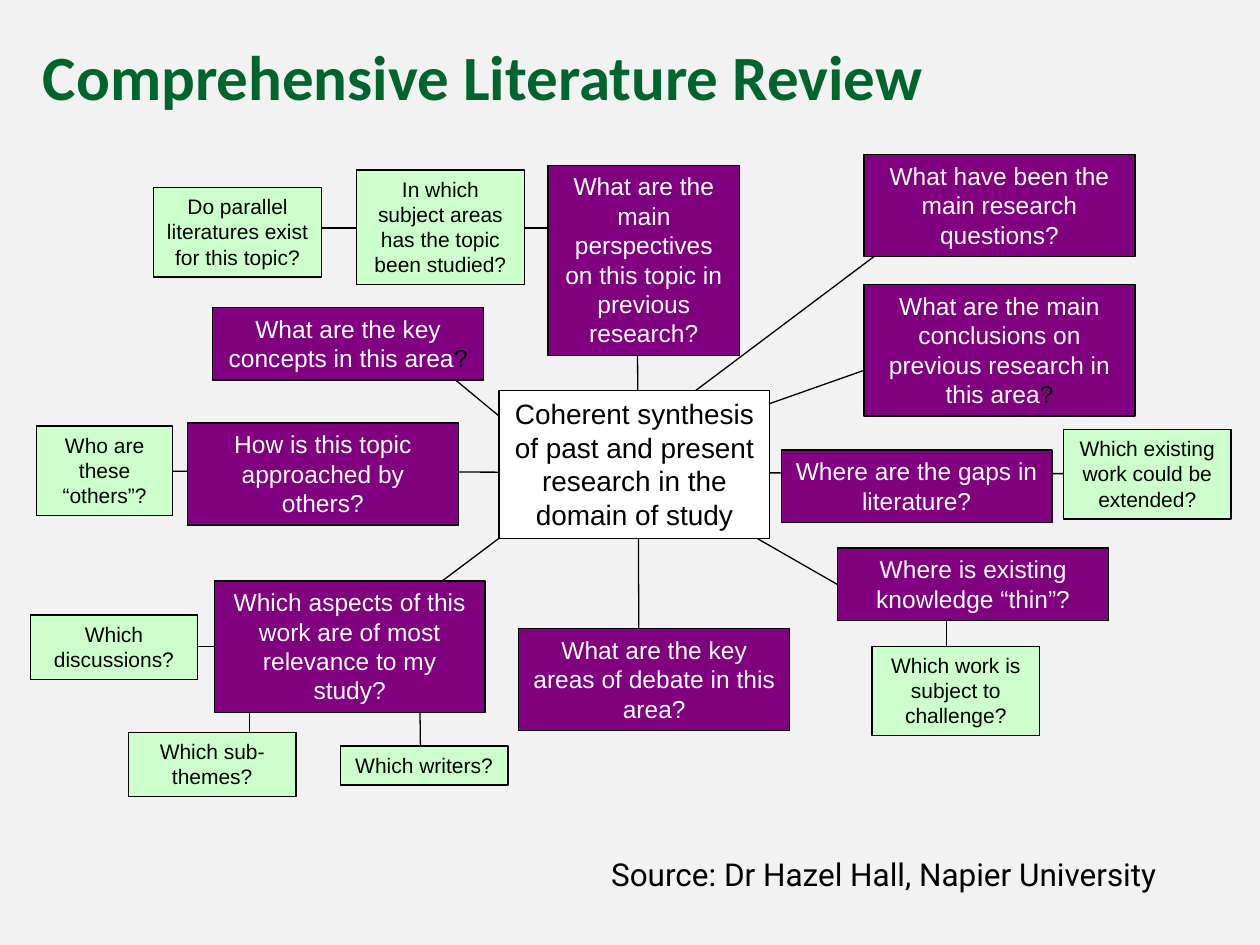
from lxml.etree import SubElement
from pptx import Presentation
from pptx.dml.color import RGBColor
from pptx.enum.shapes import MSO_CONNECTOR, MSO_SHAPE
from pptx.enum.text import MSO_ANCHOR, PP_ALIGN
from pptx.oxml.ns import qn
from pptx.util import Cm, Pt

HUES = {
    "back": "F2F2F2", "title": "00642D", "black": "000000",
    "white": "FFFFFF", "purple": "800080", "green": "CCFFCC",
}
KINDS = {
    "core": ("white", "black", 16),
    "main": ("purple", "white", 14),
    "side": ("green", "black", 12),
}
TITLE = "Comprehensive Literature Review"
SOURCE = "Source: Dr Hazel Hall, Napier University"
WIDE, SLIM = 5.46, 3.38

LINKS = [
    (6.22, 4.6, 12.07, 4.6),
    (19.08, 11.99, 19.08, 13.11),
    (3.73, 13.03, 5.16, 13.03),
    (8.46, 13.82, 8.48, 15.42),
    (5.03, 13.97, 5.03, 15.14),
    (8.64, 7.21, 10.57, 8.81),
    (14.68, 10.52, 17.07, 11.89),
    (14.88, 8.36, 19.08, 6.88),
    (8.89, 11.73, 18.62, 4.42),
    (12.85, 6.63, 12.88, 13.21),
    (3.2, 9.5, 22.2, 9.55),
]
BOXES = [
    ("core", 10.06, 7.87, WIDE, 4,
     ["Coherent synthesis of past and present research in the domain of study"]),
    ("main", 17.42, 5.74, WIDE, 4,
     ["What are the main conclusions on previous research in this area", "?"]),
    ("main", 10.46, 12.67, WIDE, 3, ["What are the key areas of debate in this area?"]),
    ("main", 4.32, 11.71, WIDE, 4,
     ["Which aspects of this work are of most relevance to my study?"]),
    ("main", 4.29, 6.2, WIDE, 2, ["What are the key concepts in this area", "?"]),
    ("main", 17.42, 3.12, WIDE, 3, ["What have been the main research questions?"]),
    ("main", 16.89, 11.05, WIDE, 2, ["Where is existing knowledge “thin”?"]),
    ("main", 3.78, 8.53, WIDE, 3, ["How is this topic approached by others?"]),
    ("main", 15.75, 9.07, WIDE, 2, ["Where are the gaps in literature?"]),
    ("main", 11.05, 3.33, 3.86, 6,
     ["What are the main perspectives on this topic in previous research?"]),
    ("side", 3.1, 3.78, SLIM, 3, ["Do parallel literatures exist for this topic?"]),
    ("side", 0.61, 12.4, SLIM, 2, ["Which discussions?"]),
    ("side", 2.59, 14.76, SLIM, 2, ["Which sub-themes?"]),
    ("side", 6.86, 15.04, SLIM, 1, ["Which writers?"]),
    ("side", 17.58, 13.03, SLIM, 3, ["Which work is subject to challenge?"]),
    ("side", 0.74, 8.59, 2.74, 3, ["Who are these “others”?"]),
    ("side", 21.44, 8.66, SLIM, 3, ["Which existing work could be extended?"]),
    ("side", 7.19, 3.43, SLIM, 4, ["In which subject areas has the topic been studied?"]),
]


def hue(name):
    return RGBColor.from_string(HUES[name])


def write(para, text, face, size, ink, bold=False):
    run = para.add_run()
    run.text = text
    font = run.font
    font.name, font.size, font.bold = face, Pt(size), bold
    font.color.rgb = hue(ink)


def edge(line):
    line.color.rgb = hue("black")
    line.width = Pt(0.75)


def link(ends):
    wire = slide.shapes.add_connector(MSO_CONNECTOR.STRAIGHT, *map(Cm, ends))
    edge(wire.line)
    SubElement(wire.element.spPr, qn("a:effectLst"))


def box(kind, left, top, width, rows, parts):
    fill, ink, size = KINDS[kind]
    high = rows * size * 0.0423 + 0.28
    shape = slide.shapes.add_shape(
        MSO_SHAPE.RECTANGLE, *map(Cm, (left, top, width, high)))
    shape.shadow.inherit = False
    shape.fill.solid()
    shape.fill.fore_color.rgb = hue(fill)
    edge(shape.line)
    frame = shape.text_frame
    frame.word_wrap = True
    frame.vertical_anchor = MSO_ANCHOR.TOP
    para = frame.paragraphs[0]
    para.alignment = PP_ALIGN.CENTER
    for text, tone in zip(parts, (ink, "black")):
        write(para, text, "Arial", size, tone)


deck = Presentation()
deck.slide_width, deck.slide_height = Cm(25.4), Cm(19.05)
slide = deck.slides.add_slide(deck.slide_layouts[5])
slide.background.fill.solid()
slide.background.fill.fore_color.rgb = hue("back")

for ends in LINKS:
    link(ends)

head = slide.shapes.title
head.left, head.top, head.width, head.height = map(Cm, (0.61, -0.08, 22.86, 3.18))
head.text_frame.vertical_anchor = MSO_ANCHOR.MIDDLE
para = head.text_frame.paragraphs[0]
para.alignment = PP_ALIGN.LEFT
write(para, TITLE, "Calibri", 36, "title", True)

for item in BOXES:
    box(*item)

note = slide.shapes.add_textbox(*map(Cm, (12.07, 17.12, 12.19, 1.02)))
note.text_frame.word_wrap = True
write(note.text_frame.paragraphs[0], SOURCE, "Roboto", 18, "black")

deck.save("out.pptx")
